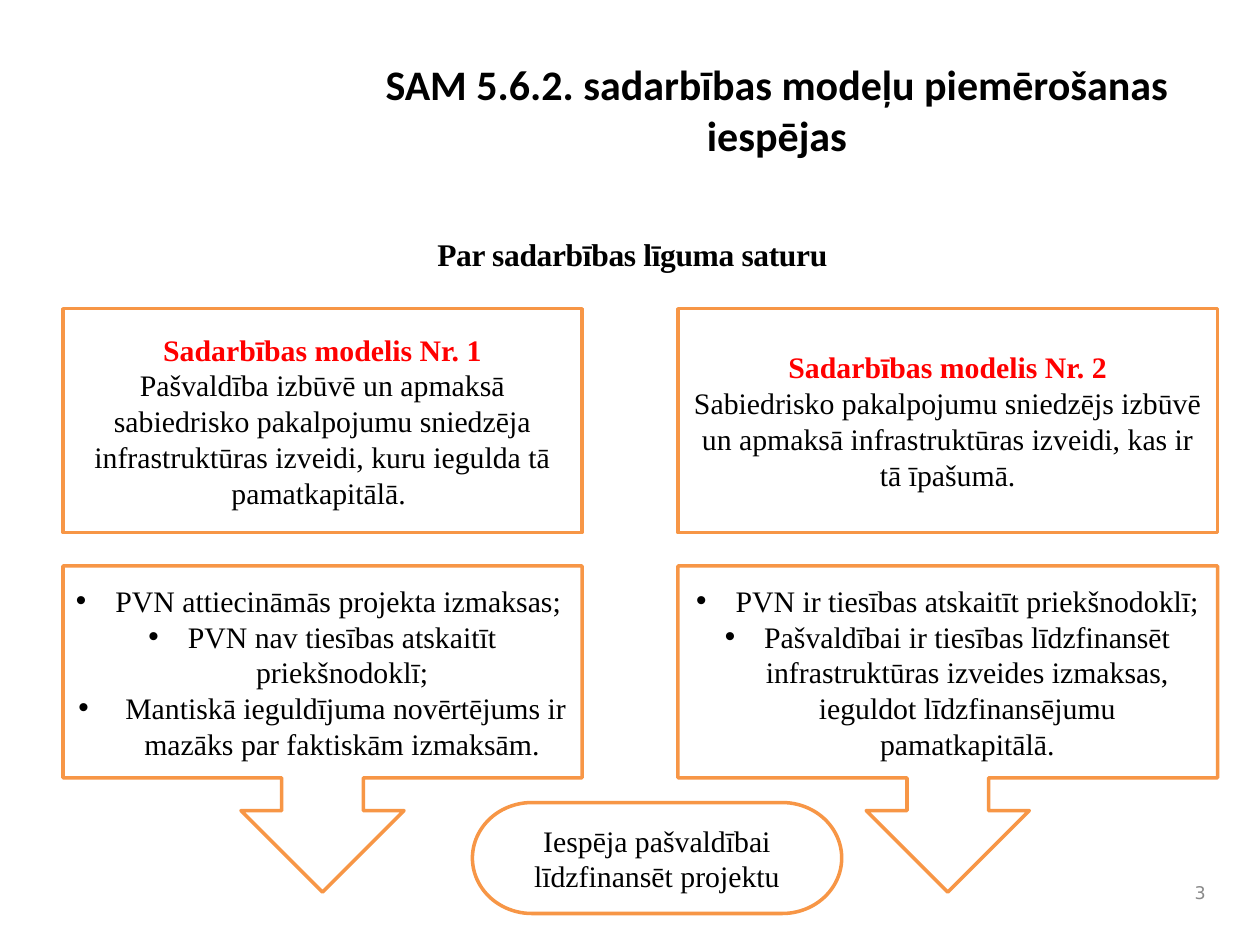
from lxml import etree
from pptx import Presentation
from pptx import util as u
from pptx.dml.color import RGBColor
from pptx.enum import shapes, text
from pptx.oxml.ns import qn

HUES = {"ink": "000000", "red": "FF0000", "edge": "F79646", "paper": "FFFFFF", "gray": "898989"}
SERIF = "Times New Roman"
FORM = shapes.MSO_SHAPE
MODELS = [
    (36, 296.6, "Sadarbības modelis Nr. 1",
     "Pašvaldība izbūvē un apmaksā sabiedrisko pakalpojumu sniedzēja "
     "infrastruktūras izveidi, kuru iegulda tā pamatkapitālā. ",
     ["PVN attiecināmās projekta izmaksas; ",
      "PVN nav tiesības atskaitīt priekšnodoklī;",
      " Mantiskā ieguldījuma novērtējums ir mazāks par faktiskām izmaksām."]),
    (387.4, 308.4, "Sadarbības modelis Nr. 2",
     "Sabiedrisko pakalpojumu sniedzējs izbūvē un apmaksā infrastruktūras "
     "izveidi, kas ir tā īpašumā.",
     ["PVN ir tiesības atskaitīt priekšnodoklī;",
      "Pašvaldībai ir tiesības līdzfinansēt infrastruktūras izveides izmaksas, "
      "ieguldot līdzfinansējumu pamatkapitālā."]),
]


def color(name):
    """Return the named colour."""
    return RGBColor.from_string(HUES[name])


def write(frame, words, size=17, face=SERIF, hue="ink", bold=False,
          align=text.PP_ALIGN.CENTER, bullet=False, track=None):
    """Add one formatted paragraph to a text frame."""
    para = frame.paragraphs[0] if not frame.text else frame.add_paragraph()
    para.alignment = align
    if bullet:
        props = para._p.get_or_add_pPr()
        props.set("marL", str(u.Pt(22.5)))
        props.set("indent", str(u.Pt(-22.5)))
        etree.SubElement(props, qn("a:buFont"), typeface="Arial")
        etree.SubElement(props, qn("a:buChar"), char="•")
    run = para.add_run()
    run.text = words
    font = run.font
    font.size, font.name, font.bold = u.Pt(size), face, bold
    font.color.rgb = color(hue)
    if track:
        run._r.get_or_add_rPr().set("spc", str(track))


def label(slide, area, words, anchor=text.MSO_ANCHOR.TOP, **style):
    """Add a wrapped text box."""
    frame = slide.shapes.add_textbox(*map(u.Pt, area)).text_frame
    frame.word_wrap = True
    frame.vertical_anchor = anchor
    write(frame, words, **style)


def panel(slide, form, area):
    """Add an outlined shape and return its text frame."""
    shape = slide.shapes.add_shape(form, *map(u.Pt, area))
    shape.shadow.inherit = False
    shape.fill.solid()
    shape.fill.fore_color.rgb = color("paper")
    shape.line.color.rgb = color("edge")
    shape.line.width = u.Pt(2)
    frame = shape.text_frame
    frame.word_wrap = True
    frame.vertical_anchor = text.MSO_ANCHOR.MIDDLE
    return frame


def model(slide, left, width, title, body, points):
    """Add one model box with its arrow callout below."""
    frame = panel(slide, FORM.RECTANGLE, (left, 176.4, width, 128))
    write(frame, title, hue="red", bold=True)
    write(frame, body)
    frame = panel(slide, FORM.DOWN_ARROW_CALLOUT, (left, 323.4, width, 186.4))
    for point in points:
        write(frame, point, bullet=True)


def main():
    """Build and save the slide."""
    deck = Presentation()
    deck.slide_width, deck.slide_height = u.Pt(720), u.Pt(540)
    slide = deck.slides.add_slide(deck.slide_layouts[6])
    label(slide, (204, 30, 480, 81.6), "SAM 5.6.2. sadarbības modeļu piemērošanas iespējas",
          size=24, face="Calibri", bold=True)
    label(slide, (26.6, 131, 669.6, 391), "Par sadarbības līguma saturu",
          size=18, bold=True, track=-20)
    label(slide, (672, 498.2, 24, 24), "3", anchor=text.MSO_ANCHOR.MIDDLE, size=10,
          face="DejaVu Sans", hue="gray", align=text.PP_ALIGN.RIGHT)
    for item in MODELS:
        model(slide, *item)
    frame = panel(slide, FORM.FLOWCHART_TERMINATOR, (270, 458.6, 211, 63.4))
    write(frame, "Iespēja pašvaldībai līdzfinansēt projektu")
    deck.save("out.pptx")


if __name__ == "__main__":
    main()
